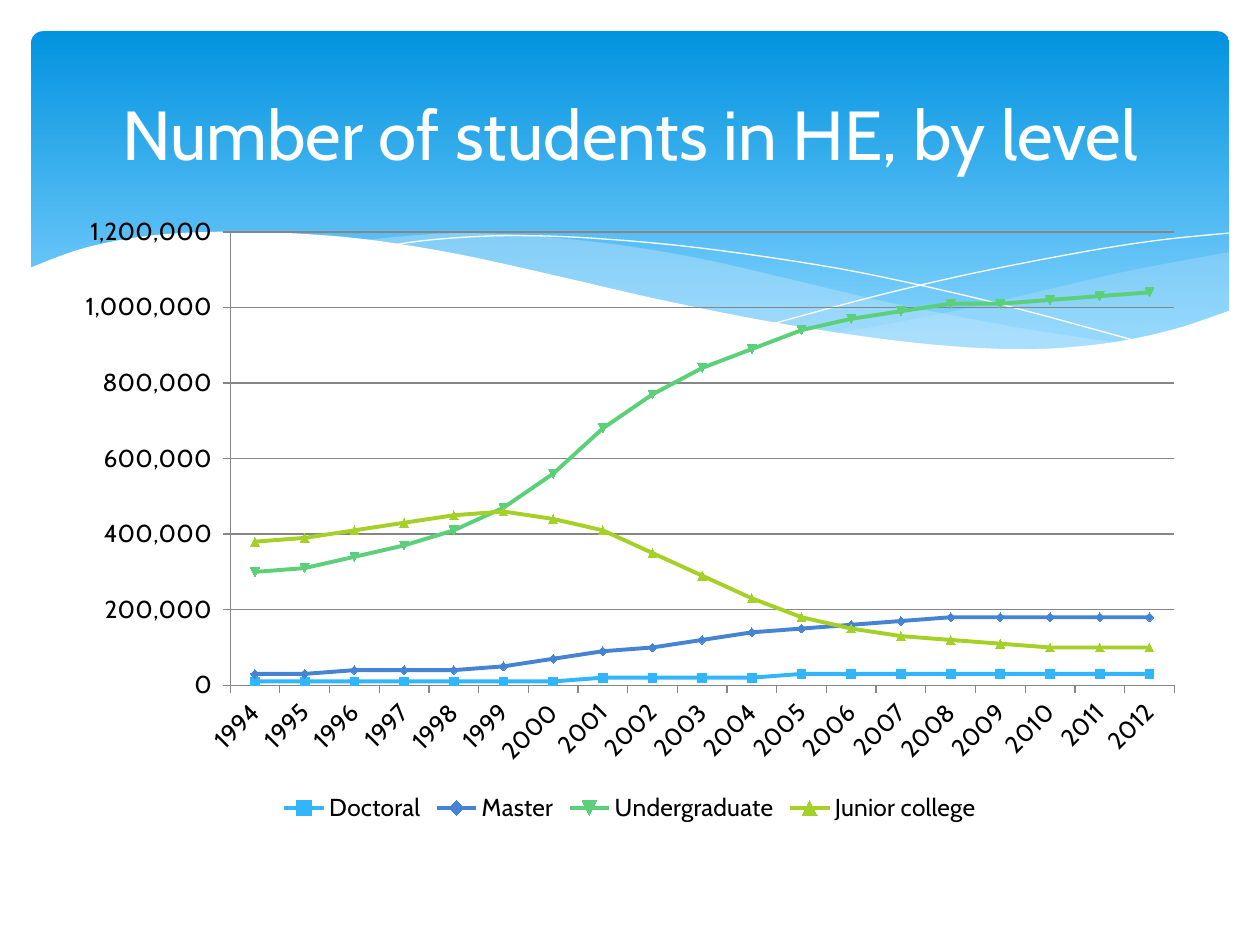
import dataclasses
import typing

import lxml.etree
import pptx
import pptx.chart.data
import pptx.dml.color
import pptx.enum.chart
import pptx.enum.shapes
import pptx.enum.text
import pptx.oxml.ns
import pptx.util

Cm, Pt = pptx.util.Cm, pptx.util.Pt
RGB = pptx.dml.color.RGBColor.from_string
Point = tuple[float, float]


@dataclasses.dataclass(frozen=True)
class Theme:
    font: str = "Cabin"
    white: str = "FFFFFF"
    text: str = "000000"
    top: str = "0293E0"
    base: str = "83D3FE"
    wave: str = "C6E7FC"
    axis: str = "868686"
    title: float = 39.6
    label: float = 14


@dataclasses.dataclass(frozen=True)
class Wave:
    """A curved outline in cm; each edge is a smooth run through its points."""
    edges: list[list[Point]]
    fill: str | None = None
    alpha: int = 100


@dataclasses.dataclass(frozen=True)
class Level:
    name: str
    color: str
    counts: list[int]  # in units of 10,000 students


THEME = Theme()

WAVES = [
    # Right-hand swell
    Wave([[(24.79, 5.08), (23.01, 5.41), (21.87, 5.66), (19.79, 6.15),
           (17.93, 6.53), (16.79, 6.73)],
          [(16.79, 6.73), (18.26, 6.91), (19.53, 7.04), (20.68, 7.06),
           (21.92, 6.99), (23.19, 6.78), (24.1, 6.53), (24.79, 6.27)]],
         THEME.wave, 29),
    # Middle swell
    Wave([[(22.68, 6.93), (20.5, 6.6), (17.93, 6.1), (15.98, 5.64),
           (14.1, 5.21), (12.42, 4.93), (10.67, 4.75), (9.17, 4.7),
           (7.95, 4.78), (7.26, 4.85)],
          [(7.26, 4.85), (9.19, 5.16), (11.4, 5.64), (13.46, 6.1),
           (15.7, 6.55), (17.65, 6.86), (19.33, 7.04), (20.78, 7.06),
           (21.77, 7.04), (22.68, 6.93)]],
         THEME.wave, 40),
    # Thin white curves
    Wave([[(7.85, 4.95), (8.74, 4.83), (10.19, 4.75), (11.91, 4.8),
           (14.12, 5), (16.89, 5.41), (19.3, 5.92), (21.11, 6.38),
           (23.04, 6.91)]]),
    Wave([[(15.57, 6.53), (17.65, 5.97), (19.71, 5.49), (22, 5.05),
           (23.47, 4.83), (24.77, 4.7)]]),
    # White foreground that cuts the banner's lower edge
    Wave([[(24.82, 6.25), (23.62, 6.65), (22.23, 6.93), (20.55, 7.04),
           (18.44, 6.91), (15.9, 6.55), (13.44, 6.07), (11.35, 5.59),
           (9.27, 5.13), (7.42, 4.83), (5.84, 4.7), (4.5, 4.67),
           (3.02, 4.75), (1.7, 5), (0.58, 5.41)],
          [(0.58, 8.36), (24.82, 8.36)]],
         THEME.white),
]

YEARS = [str(year) for year in range(1994, 2013)]
LEVELS = [
    Level("Doctoral", "31B6FD", [1] * 7 + [2] * 4 + [3] * 8),
    Level("Master", "4584D3", [3, 3, 4, 4, 4, 5, 7, 9, 10, 12, 14, 15, 16, 17,
                               18, 18, 18, 18, 18]),
    Level("Undergraduate", "5BD078", [30, 31, 34, 37, 41, 47, 56, 68, 77, 84,
                                      89, 94, 97, 99, 101, 101, 102, 103, 104]),
    Level("Junior college", "A5D028", [38, 39, 41, 43, 45, 46, 44, 41, 35, 29,
                                       23, 18, 15, 13, 12, 11, 10, 10, 10]),
]


def smooth(knots: list[Point], steps: int = 6) -> list[Point]:
    """Run a Catmull-Rom curve through the knots."""
    ends = [knots[0], *knots, knots[-1]]
    curve = [knots[0]]
    for a, b, c, d in zip(ends, ends[1:], ends[2:], ends[3:]):
        for step in range(1, steps + 1):
            t = step / steps
            x, y = (
                (2 * q + (r - p) * t + (2 * p - 5 * q + 4 * r - s) * t ** 2
                 + (3 * q - p - 3 * r + s) * t ** 3) / 2
                for p, q, r, s in zip(a, b, c, d))
            curve.append((x, y))
    return curve


def draw_banner(shapes: typing.Any) -> None:
    banner = shapes.add_shape(pptx.enum.shapes.MSO_SHAPE.ROUNDED_RECTANGLE,
                              Cm(0.63), Cm(0.63), Cm(24.15), Cm(6.86))
    banner.adjustments[0] = 0.034
    banner.shadow.inherit = False
    banner.line.fill.background()
    banner.fill.gradient()
    banner.fill.gradient_angle = 270
    stops = zip(banner.fill.gradient_stops, (0, 0.9), (THEME.top, THEME.base))
    for stop, place, color in stops:
        stop.position = place
        stop.color.rgb = RGB(color)


def draw_wave(shapes: typing.Any, wave: Wave) -> None:
    path = [(Cm(x), Cm(y)) for edge in wave.edges for x, y in smooth(edge)]
    pen = shapes.build_freeform(*path[0])
    pen.add_line_segments(path[1:], close=wave.fill is not None)
    shape = pen.convert_to_shape()
    shape.shadow.inherit = False
    if wave.fill is None:
        shape.fill.background()
        shape.line.color.rgb = RGB(THEME.white)
        shape.line.width = Pt(0)
        return
    shape.line.fill.background()
    shape.fill.solid()
    shape.fill.fore_color.rgb = RGB(wave.fill)
    if wave.alpha < 100:
        tint = shape._element.spPr.find(".//" + pptx.oxml.ns.qn("a:srgbClr"))
        lxml.etree.SubElement(tint, pptx.oxml.ns.qn("a:alpha"),
                              val=str(wave.alpha * 1000))


def set_title(title: typing.Any, text: str) -> None:
    title.left, title.top = Cm(1.27), Cm(0.94)
    title.width, title.height = Cm(22.86), Cm(3.48)
    frame = title.text_frame
    frame.text = text
    frame.word_wrap = True
    frame.auto_size = pptx.enum.text.MSO_AUTO_SIZE.NONE
    frame.vertical_anchor = pptx.enum.text.MSO_ANCHOR.MIDDLE
    line = frame.paragraphs[0]
    line.alignment = pptx.enum.text.PP_ALIGN.CENTER
    line.font.name, line.font.size = THEME.font, Pt(THEME.title)
    line.font.color.rgb = RGB(THEME.white)


def draw_chart(shapes: typing.Any) -> None:
    kinds = pptx.enum.chart
    data = pptx.chart.data.CategoryChartData()
    data.categories = YEARS
    for level in LEVELS:
        data.add_series(level.name, [count * 10000 for count in level.counts])
    chart = shapes.add_chart(kinds.XL_CHART_TYPE.LINE_MARKERS, Cm(1.27), Cm(4.12),
                             Cm(22.86), Cm(12.57), data).chart
    chart.has_title = False
    chart.font.name, chart.font.size = THEME.font, Pt(THEME.label)
    chart.font.color.rgb = RGB(THEME.text)
    chart.has_legend = True
    chart.legend.position = kinds.XL_LEGEND_POSITION.BOTTOM
    chart.legend.include_in_layout = False

    # Axes and gridlines
    years, count = chart.category_axis, chart.value_axis
    for axis in (years, count):
        axis.major_tick_mark = kinds.XL_TICK_MARK.OUTSIDE
        axis.format.line.color.rgb = RGB(THEME.axis)
    years.tick_labels.font.size = Pt(THEME.label)
    years._element.txPr.bodyPr.set("rot", "-2700000")
    count.minimum_scale, count.maximum_scale = 0, 1200000
    count.major_unit = 200000
    count.has_major_gridlines = True
    count.major_gridlines.format.line.color.rgb = RGB(THEME.axis)
    count.tick_labels.number_format = r"#,##0_);\(#,##0\)"
    count.tick_labels.number_format_is_linked = False

    # Lines and markers
    chart.plots[0].vary_by_categories = False
    for level, line in zip(LEVELS, chart.plots[0].series):
        line.smooth = False
        line.format.line.width = Pt(2.25)
        line.marker.style = kinds.XL_MARKER_STYLE.AUTOMATIC
        line.marker.size = 5
        line.marker.format.fill.solid()
        for part in (line.format.line, line.marker.format.line):
            part.color.rgb = RGB(level.color)
        line.marker.format.fill.fore_color.rgb = RGB(level.color)


def main() -> None:
    deck = pptx.Presentation()
    deck.slide_width, deck.slide_height = Cm(25.4), Cm(19.05)
    slide = deck.slides.add_slide(deck.slide_layouts[5])
    shapes = slide.shapes
    draw_banner(shapes)
    for wave in WAVES:
        draw_wave(shapes, wave)
    title = shapes.title
    set_title(title, "Number of students in HE, by level")
    shapes._spTree.append(title._element)  # bring in front of the banner
    draw_chart(shapes)
    deck.save("out.pptx")


if __name__ == "__main__":
    main()
